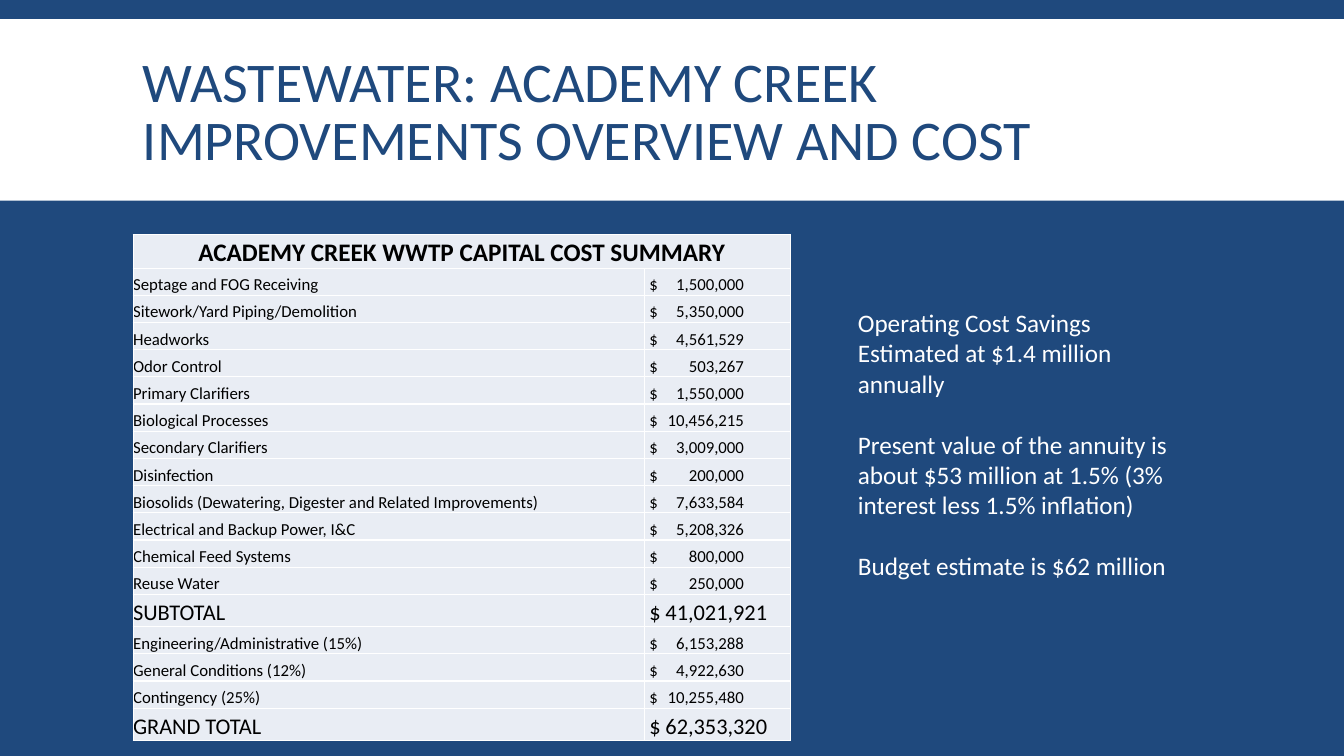
from lxml.etree import SubElement
from pptx import Presentation
from pptx.dml.color import RGBColor
from pptx.enum.shapes import MSO_SHAPE as SHAPE
from pptx.enum.text import MSO_ANCHOR as ANCHOR, MSO_AUTO_SIZE as AUTO_SIZE, PP_ALIGN as ALIGN
from pptx.oxml import parse_xml
from pptx.oxml.ns import nsdecls, qn
from pptx.util import Inches, Pt

NAVY, WHITE, BLACK, PALE = "1F497D", "FFFFFF", "000000", "E9EDF4"

TABLE_TITLE = "ACADEMY CREEK WWTP CAPITAL COST SUMMARY"
COSTS = [
    ("Septage and FOG Receiving", "1,500,000"),
    ("Sitework/Yard Piping/Demolition", "5,350,000"),
    ("Headworks", "4,561,529"),
    ("Odor Control", "503,267"),
    ("Primary Clarifiers", "1,550,000"),
    ("Biological Processes", "10,456,215"),
    ("Secondary Clarifiers", "3,009,000"),
    ("Disinfection", "200,000"),
    ("Biosolids (Dewatering, Digester and Related Improvements)", "7,633,584"),
    ("Electrical and Backup Power, I&C", "5,208,326"),
    ("Chemical Feed Systems", "800,000"),
    ("Reuse Water", "250,000"),
    ("SUBTOTAL", "41,021,921"),
    ("Engineering/Administrative (15%)", "6,153,288"),
    ("General Conditions (12%)", "4,922,630"),
    ("Contingency (25%)", "10,255,480"),
    ("GRAND TOTAL", "62,353,320"),
]
TOTALS = {"SUBTOTAL", "GRAND TOTAL"}
NOTES = [
    "Operating Cost Savings Estimated at $1.4 million annually",
    "Present value of the annuity is about $53 million at 1.5% "
    "(3% interest less 1.5% inflation)",
    "Budget estimate is $62 million",
]


def rgb(color):
    return RGBColor.from_string(color)


class SlideBuilder:
    font = "Calibri"

    def __init__(self, slide, background):
        self.s = slide
        fill = slide.background.fill
        fill.solid()
        fill.fore_color.rgb = rgb(background)

    def style(self, p, size, color, bold=False):
        p.font.name, p.font.size, p.font.bold = self.font, Pt(size), bold
        p.font.color.rgb = rgb(color)

    def band(self, x, y, w, h, color):
        sp = self.s.shapes.add_shape(SHAPE.RECTANGLE, Inches(x), Inches(y), Inches(w), Inches(h))
        sp.shadow.inherit = False
        sp.fill.solid()
        sp.fill.fore_color.rgb = rgb(color)
        sp.line.fill.background()

    def text(self, x, y, w, h, paragraphs, size, color, anchor=ANCHOR.TOP,
             line_spacing=1.0, gap=0, auto_size=AUTO_SIZE.NONE):
        tf = self.s.shapes.add_textbox(Inches(x), Inches(y), Inches(w), Inches(h)).text_frame
        tf.word_wrap, tf.auto_size, tf.vertical_anchor = True, auto_size, anchor
        for i, words in enumerate(paragraphs):
            p = tf.add_paragraph() if i else tf.paragraphs[0]
            p.text, p.line_spacing = words, line_spacing
            if i:
                p.space_before = Pt(gap)
            self.style(p, size, color)

    def cell(self, cell, words, size, left=0, tab=None, align=ALIGN.LEFT, bold=False):
        """Fill one table cell; tab is a right tab stop in inches."""
        cell.margin_left = Inches(left)
        cell.margin_right = cell.margin_top = cell.margin_bottom = 0
        cell.vertical_anchor = ANCHOR.BOTTOM
        p = cell.text_frame.paragraphs[0]
        p.text, p.alignment = words, align
        if tab:
            stops = SubElement(p._p.get_or_add_pPr(), qn("a:tabLst"))
            SubElement(stops, qn("a:tab"), pos=str(Inches(tab)), algn="r")
        self.style(p, size, BLACK, bold)

    def frame(self, cell, fill, border):
        cell.fill.solid()
        cell.fill.fore_color.rgb = rgb(fill)
        for i, side in enumerate("LRTB"):
            cell._tc.get_or_add_tcPr().insert(i, parse_xml(
                f'<a:ln{side} {nsdecls("a")} w="{Pt(1)}"><a:solidFill>'
                f'<a:srgbClr val="{border}"/></a:solidFill></a:ln{side}>'))

    def cost_table(self, x, y, widths, title, costs):
        heights = [0.33] + [0.32 if label in TOTALS else 0.27 for label, _ in costs]
        table = self.s.shapes.add_table(
            len(heights), len(widths), Inches(x), Inches(y),
            Inches(sum(widths)), Inches(sum(heights))).table
        table.first_row = table.horz_banding = False
        for column, width in zip(table.columns, widths):
            column.width = Inches(width)
        for row, height in zip(table.rows, heights):
            row.height = Inches(height)
        for cell in table.iter_cells():
            self.frame(cell, PALE, WHITE)
        table.cell(0, 0).merge(table.cell(0, 1))
        self.cell(table.cell(0, 0), title, 18, align=ALIGN.CENTER, bold=True)
        for i, (label, amount) in enumerate(costs, 1):
            total = label in TOTALS
            size = 16 if total else 12
            self.cell(table.cell(i, 0), label, size)
            self.cell(table.cell(i, 1), f"$\t{amount}", size, left=0.05,
                      tab=1.17 if total else 0.94)


def main():
    prs = Presentation()
    prs.slide_width, prs.slide_height = Inches(13.33), Inches(7.5)
    s = SlideBuilder(prs.slides.add_slide(prs.slide_layouts[6]), NAVY)
    s.band(0, 0.19, 13.33, 1.8, WHITE)
    s.text(1.32, 0.31, 10.7, 1.65,
           ["WASTEWATER: ACADEMY CREEK IMPROVEMENTS OVERVIEW AND COST"],
           40, NAVY, anchor=ANCHOR.MIDDLE, line_spacing=0.85)
    s.cost_table(1.32, 2.33, [5.07, 1.45], TABLE_TITLE, COSTS)
    s.text(8.41, 3, 3.42, 2.83, NOTES, 18, WHITE, gap=22,
           auto_size=AUTO_SIZE.SHAPE_TO_FIT_TEXT)
    prs.save("out.pptx")


if __name__ == "__main__":
    main()
